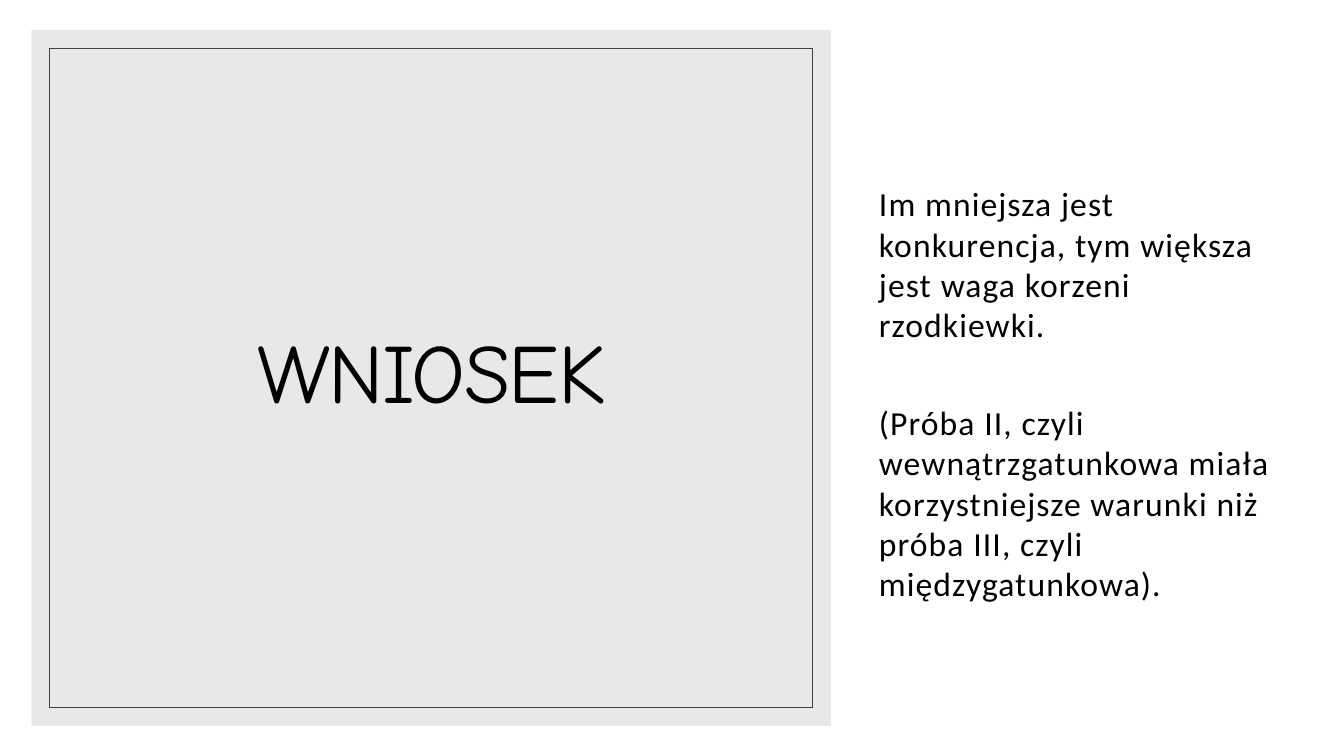
from pptx import Presentation
from pptx.dml.color import RGBColor
from pptx.enum.shapes import MSO_SHAPE
from pptx.enum.text import MSO_ANCHOR, PP_ALIGN
from pptx.util import Pt

CONCLUSIONS = [
    "Im mniejsza jest konkurencja, tym większa jest waga korzeni rzodkiewki.",
    "(Próba II, czyli wewnątrzgatunkowa miała korzystniejsze warunki niż "
    "próba III, czyli międzygatunkowa).",
]


def color(hex_code):
    return RGBColor.from_string(hex_code)


def add_rectangle(page, left, top, width, height):
    """Add a rectangle without shadow, fill or line."""
    shape = page.shapes.add_shape(
        MSO_SHAPE.RECTANGLE, Pt(left), Pt(top), Pt(width), Pt(height))
    shape.shadow.inherit = False
    shape.fill.background()
    shape.line.fill.background()
    return shape


def add_text(page, left, top, width, height, texts, font, size, tracking):
    """Add vertically centred paragraphs; tracking is in hundredths of a point."""
    box = page.shapes.add_textbox(Pt(left), Pt(top), Pt(width), Pt(height))
    frame = box.text_frame
    frame.word_wrap = True
    frame.vertical_anchor = MSO_ANCHOR.MIDDLE
    frame.text = "\n".join(texts)
    for para in frame.paragraphs:
        para.font.name = font
        para.font.size = Pt(size)
        para.font.color.rgb = color("000000")
        for span in para.runs:
            span.font._element.set("spc", str(tracking))
    return frame.paragraphs


def add_title_panel(page, left, top, width, height):
    panel = add_rectangle(page, left, top, width, height)
    panel.fill.solid()
    panel.fill.fore_color.rgb = color("E8E8E8")

    inset = 13
    border = add_rectangle(page, left + inset, top + inset,
                           width - 2 * inset, height - 2 * inset)
    border.line.color.rgb = color("404040")
    border.line.width = Pt(0.5)

    margin_x, margin_y = 74.5, 80
    title = add_text(page, left + margin_x, top + margin_y,
                     width - 2 * margin_x, height - 2 * margin_y,
                     ["WNIOSEK"], "Comic Neue", 60, -100)[0]
    title.alignment = PP_ALIGN.CENTER
    title.line_spacing = 0.83


def add_conclusions(page, left, top, width, height):
    paragraphs = add_text(page, left, top, width, height,
                          CONCLUSIONS, "Calibri", 24, 80)
    for para in paragraphs[:-1]:
        para.space_after = Pt(41)


def main():
    deck = Presentation()
    deck.slide_width, deck.slide_height = Pt(960), Pt(540)
    page = deck.slides.add_slide(deck.slide_layouts[6])
    add_title_panel(page, 22.5, 21.5, 571, 497)
    add_conclusions(page, 620.75, 100, 297.5, 362)
    deck.save("out.pptx")


if __name__ == "__main__":
    main()
